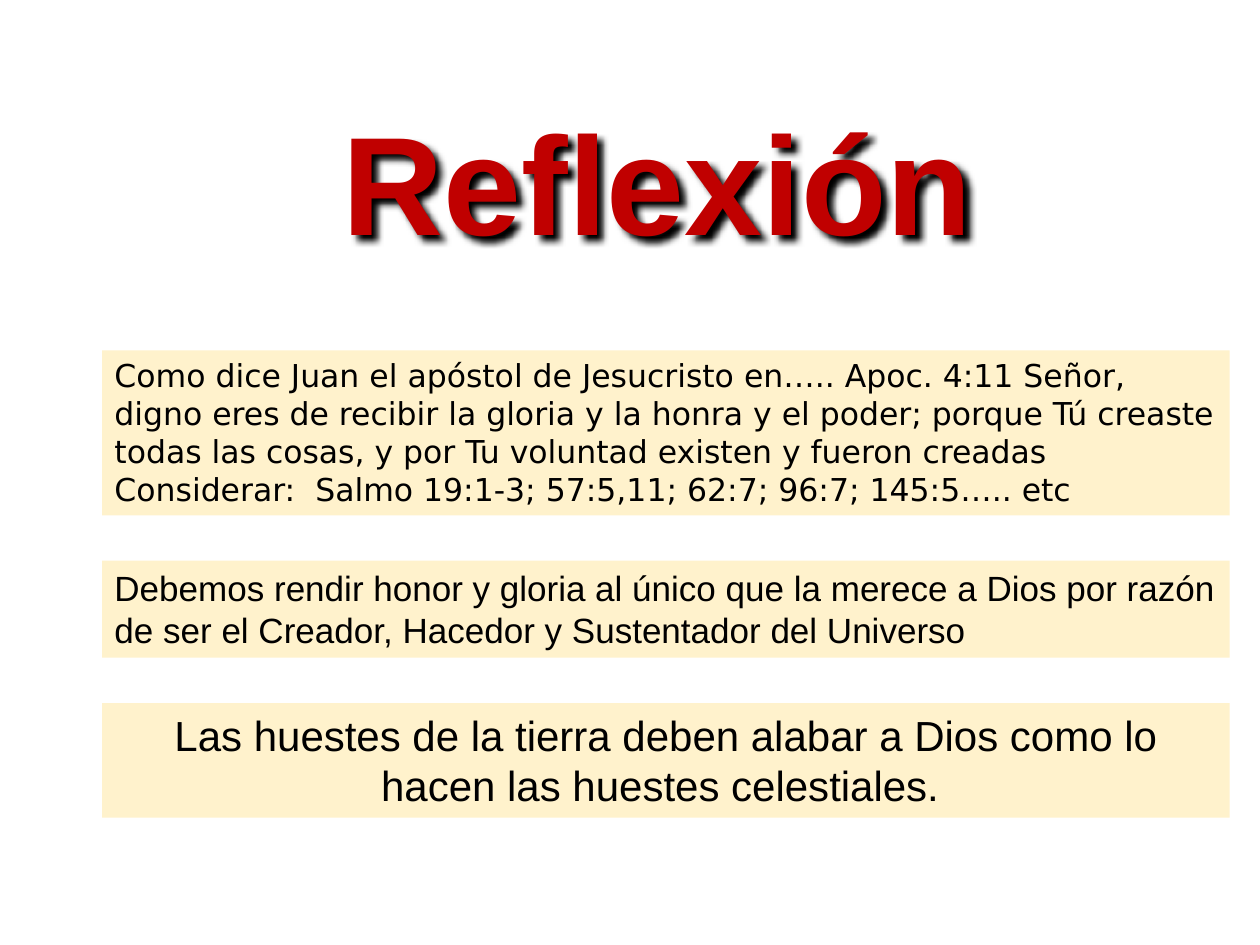
"""Build a reflection slide with a shadowed title and three cream text panels."""
from lxml import etree
from pptx import Presentation
from pptx.dml.color import RGBColor
from pptx.enum.shapes import MSO_SHAPE
from pptx.enum.text import MSO_ANCHOR, PP_ALIGN
from pptx.oxml.ns import qn
from pptx.util import Inches, Pt

RECT = MSO_SHAPE.RECTANGLE
TOP, BOTTOM = MSO_ANCHOR.TOP, MSO_ANCHOR.BOTTOM
LEFT, CENTER = PP_ALIGN.LEFT, PP_ALIGN.CENTER

TITLE = "Reflexión"
PANELS = [
    {"text": "Como dice Juan el apóstol de Jesucristo en….. Apoc. 4:11 Señor, "
             "digno eres de recibir la gloria y la honra y el poder; porque Tú creaste "
             "todas las cosas, y por Tu voluntad existen y fueron creadas "
             "Considerar:  Salmo 19:1-3; 57:5,11; 62:7; 96:7; 145:5….. etc",
     "height": 1.31, "style": "verse", "align": LEFT},
    {"text": "Debemos rendir honor y gloria al único que la merece a Dios por razón "
             "de ser el Creador, Hacedor y Sustentador del Universo",
     "height": 0.77, "style": "body", "align": LEFT},
    {"text": "Las huestes de la tierra deben alabar a Dios como lo "
             "hacen las huestes celestiales. ",
     "height": 0.91, "style": "closing", "align": CENTER},
]

THEME = {
    "panel": "FFF2CC",
    "shadow": "000000",
    "title": {"font": "Arial", "size": 80, "color": "C00000", "bold": True},
    "verse": {"font": "DejaVu Sans", "size": 18, "color": "000000"},
    "body": {"font": "Arial", "size": 20, "color": "000000"},
    "closing": {"font": "Arial", "size": 24, "color": "000000"},
}

SLIDE_W, SLIDE_H = 10, 7.5
TITLE_BOX = (1.27, 0.69, 7.9, 1.45)
PANEL_X, PANEL_Y, PANEL_W, PANEL_GAP = 0.81, 2.78, 8.95, 0.36


def write(sp, text, *, font, size, color, bold=False, align=LEFT, anchor=TOP):
    tf = sp.text_frame
    tf.word_wrap = True
    tf.vertical_anchor = anchor
    p = tf.paragraphs[0]
    p.alignment = align
    r = p.add_run()
    r.text = text
    r.font.name = font
    r.font.size = Pt(size)
    r.font.bold = bold
    r.font.color.rgb = RGBColor.from_string(color)


def add_shadow(sp, color, blur, dist, angle):
    effects = etree.SubElement(sp.element.spPr, qn("a:effectLst"))
    shadow = etree.SubElement(
        effects, qn("a:outerShdw"), blurRad=str(Pt(blur)), dist=str(Pt(dist)),
        dir=str(angle * 60000), algn="tl", rotWithShape="0")
    etree.SubElement(shadow, qn("a:srgbClr"), val=color)


def add_panel(slide, panel, y):
    box = (PANEL_X, y, PANEL_W, panel["height"])
    sp = slide.shapes.add_shape(RECT, *map(Inches, box))
    sp.shadow.inherit = False
    sp.fill.solid()
    sp.fill.fore_color.rgb = RGBColor.from_string(THEME["panel"])
    sp.line.fill.background()
    write(sp, panel["text"], align=panel["align"], **THEME[panel["style"]])


def main():
    prs = Presentation()
    prs.slide_width, prs.slide_height = Inches(SLIDE_W), Inches(SLIDE_H)
    slide = prs.slides.add_slide(prs.slide_layouts[6])

    y = PANEL_Y
    for panel in PANELS:
        add_panel(slide, panel, y)
        y += panel["height"] + PANEL_GAP

    title = slide.shapes.add_textbox(*map(Inches, TITLE_BOX))
    write(title, TITLE, align=CENTER, anchor=BOTTOM, **THEME["title"])
    add_shadow(title, THEME["shadow"], blur=4, dist=4, angle=45)

    prs.save("out.pptx")


if __name__ == "__main__":
    main()
